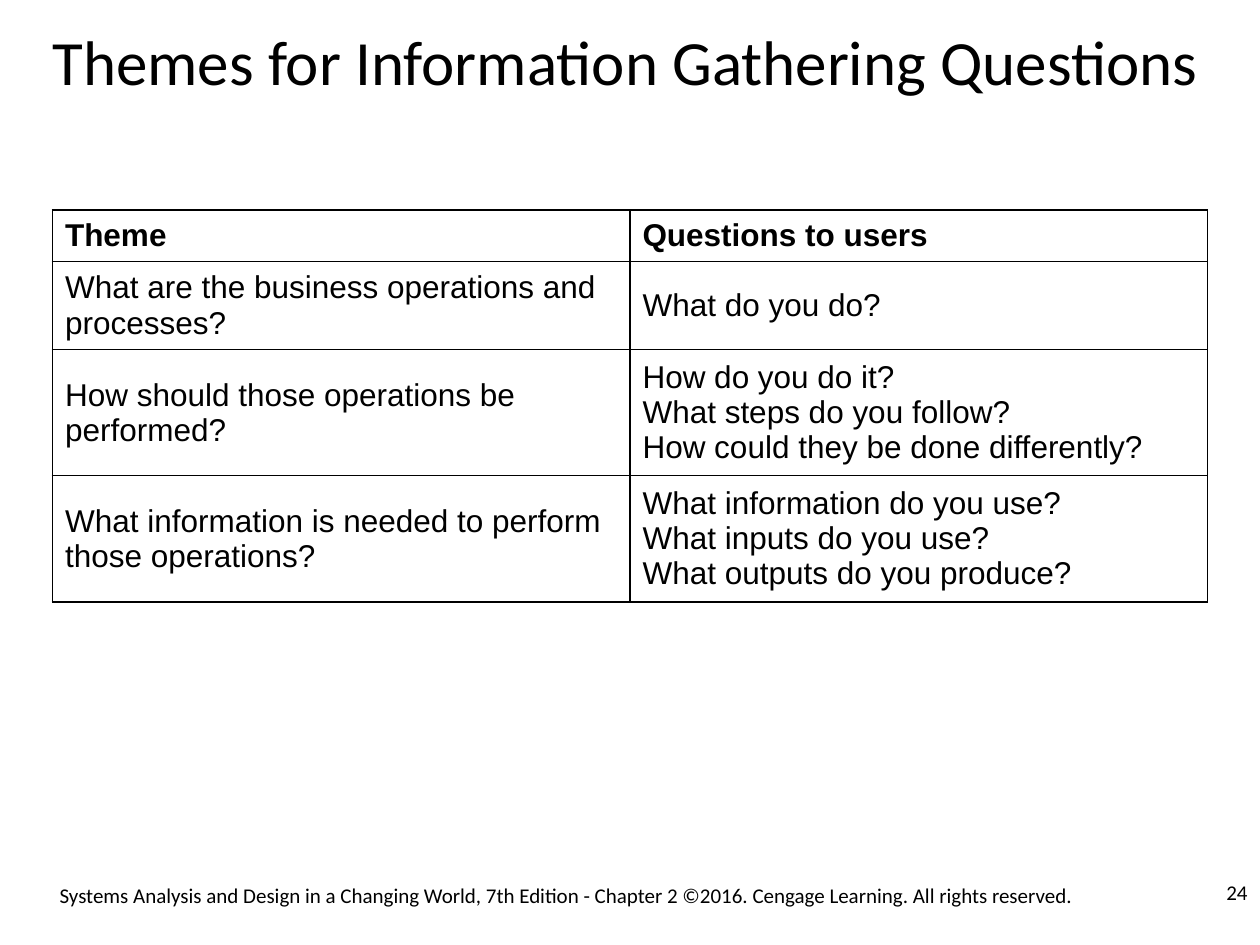
import lxml.etree
import pptx
import pptx.dml.color
import pptx.enum.text
import pptx.oxml.ns
import pptx.util

BLACK = pptx.dml.color.RGBColor(0, 0, 0)
HEADINGS = ["Theme", "Questions to users"]
THEMES = [
    ("What are the business operations and processes?", ["What do you do?"]),
    ("How should those operations be performed?",
     ["How do you do it?", "What steps do you follow?", "How could they be done differently?"]),
    ("What information is needed to perform those operations?",
     ["What information do you use?", "What inputs do you use?", "What outputs do you produce?"]),
]
COPYRIGHT = ("Systems Analysis and Design in a Changing World, 7th Edition - Chapter 2 "
             "©2016. Cengage Learning. All rights reserved.")


class ThemeSlide:
    """Places styled elements on one slide, measured on a grid of 24 columns and 18 rows."""

    heading_font = "Calibri"
    table_font = "Arial"

    def __init__(self, deck):
        self.unit_x = deck.slide_width / 24
        self.unit_y = deck.slide_height / 18
        self.slide = deck.slides.add_slide(deck.slide_layouts[5])

    def area(self, left, top, width, height):
        return (int(left * self.unit_x), int(top * self.unit_y),
                int(width * self.unit_x), int(height * self.unit_y))

    def set_lines(self, frame, lines, size, font, bold=False, align="LEFT", spacing=1.0):
        frame.text = "\n".join(lines)
        frame.word_wrap = True
        for paragraph in frame.paragraphs:
            paragraph.alignment = pptx.enum.text.PP_ALIGN[align]
            paragraph.line_spacing = spacing
            paragraph.font.name = font
            paragraph.font.size = pptx.util.Pt(size)
            paragraph.font.bold = bold
            paragraph.font.color.rgb = BLACK

    def title(self, text, *place):
        heading = self.slide.shapes.title
        heading.left, heading.top, heading.width, heading.height = self.area(*place)
        frame = heading.text_frame
        frame.margin_left = frame.margin_right = frame.margin_top = frame.margin_bottom = 0
        frame.vertical_anchor = pptx.enum.text.MSO_ANCHOR.TOP
        self.set_lines(frame, [text], 36, self.heading_font, spacing=0.9)
        frame.auto_size = pptx.enum.text.MSO_AUTO_SIZE.SHAPE_TO_FIT_TEXT

    def note(self, text, *place, anchor="TOP", **style):
        frame = self.slide.shapes.add_textbox(*self.area(*place)).text_frame
        frame.vertical_anchor = pptx.enum.text.MSO_ANCHOR[anchor]
        self.set_lines(frame, [text], 12, self.heading_font, **style)

    def border(self, cell):
        properties = cell._tc.get_or_add_tcPr()
        for side in ("a:lnL", "a:lnR", "a:lnT", "a:lnB"):
            line = lxml.etree.SubElement(properties, pptx.oxml.ns.qn(side), w=str(pptx.util.Pt(1)))
            fill = lxml.etree.SubElement(line, pptx.oxml.ns.qn("a:solidFill"))
            lxml.etree.SubElement(fill, pptx.oxml.ns.qn("a:srgbClr"), val=str(BLACK))

    def table(self, rows, heights, left, top, width):
        place = self.area(left, top, width, sum(heights))
        grid = self.slide.shapes.add_table(len(rows), len(rows[0]), *place).table
        grid.horz_banding = False
        for index, (texts, height) in enumerate(zip(rows, heights)):
            grid.rows[index].height = int(height * self.unit_y)
            for cell, lines in zip(grid.rows[index].cells, texts):
                self.border(cell)
                cell.fill.background()
                cell.vertical_anchor = pptx.enum.text.MSO_ANCHOR.MIDDLE
                self.set_lines(cell.text_frame, lines, 18, self.table_font, bold=index == 0)


def main():
    deck = pptx.Presentation()
    deck.slide_width, deck.slide_height = pptx.util.Inches(10), pptx.util.Inches(7.5)
    page = ThemeSlide(deck)
    page.note(COPYRIGHT, 0.9, 16.75, 20.5, 0.48, spacing=0.9)
    page.title("Themes for Information Gathering Questions", 1, 0.6, 22, 1.32)
    rows = [[[heading] for heading in HEADINGS]]
    rows += [[[theme], questions] for theme, questions in THEMES]
    page.table(rows, [0.98, 1.58, 2.25, 2.25], 1, 4, 22)
    page.note("24", 21, 16.4, 3, 1.2, anchor="MIDDLE", align="RIGHT")
    deck.save("out.pptx")


if __name__ == "__main__":
    main()
